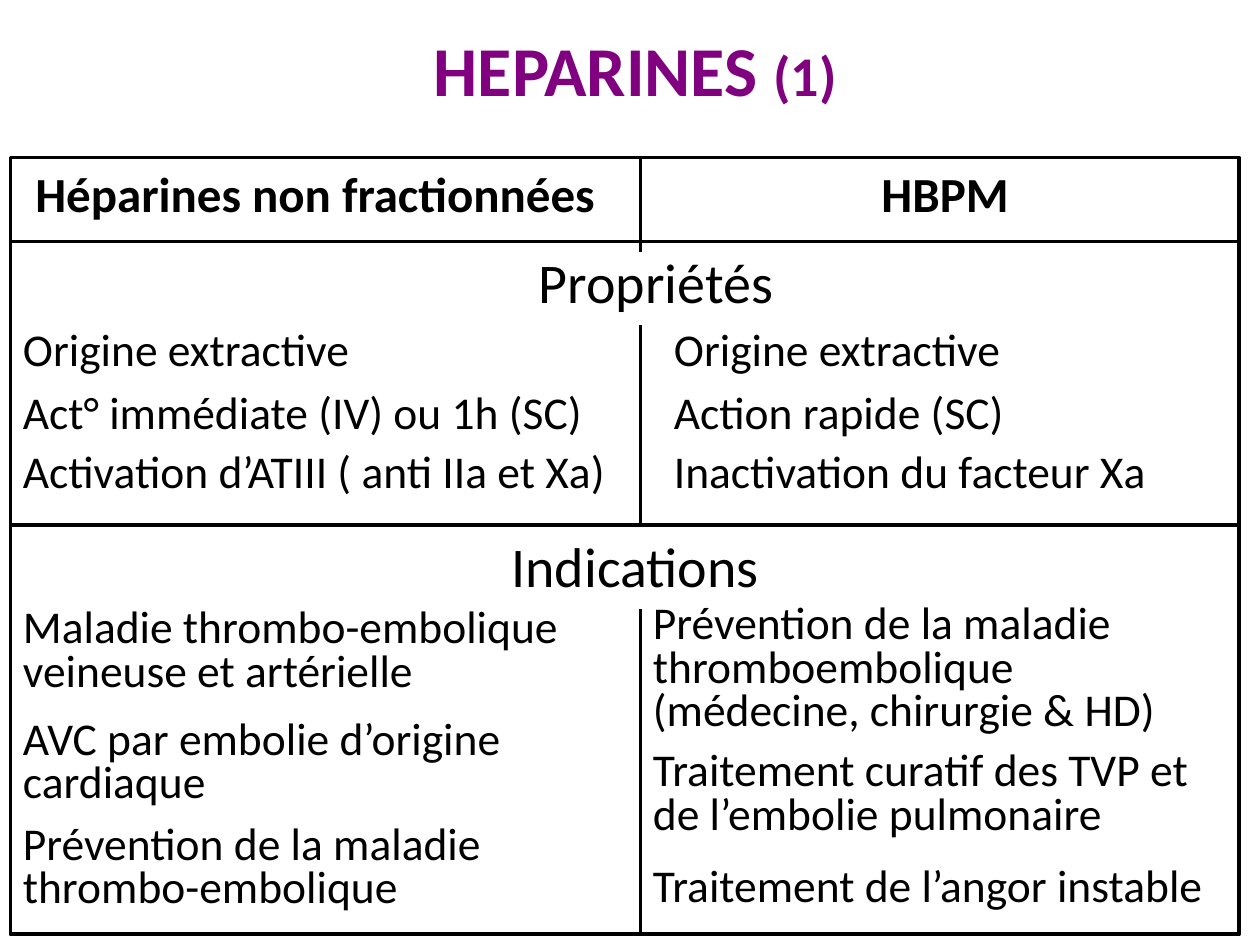
from lxml.etree import SubElement
from pptx import Presentation
from pptx.dml.color import RGBColor
from pptx.enum.shapes import MSO_CONNECTOR, MSO_SHAPE
from pptx.enum.text import MSO_ANCHOR, MSO_AUTO_SIZE, PP_ALIGN
from pptx.oxml.ns import qn
from pptx.util import Emu, Pt

PX = 7620  # EMU per px, 120 px to the inch
COLORS = {"title": "800080", "ink": "000000"}
FONT = "Calibri"
BORDER = Pt(2.25)

LEFT, MIDDLE, RIGHT = 10, 610, 1180
TOP, HEADER_END, PROPERTIES_END, BOTTOM = 150, 230, 500, 890

BODY = {"size": 26, "spacing": 0.8}
HEADER = {"size": 28, "bold": True, "align": PP_ALIGN.CENTER}
SECTION = {"size": 32, "align": PP_ALIGN.CENTER}

HEADERS = [
    ("Héparines non fractionnées", LEFT, TOP, 580, 90),
    ("HBPM", 620, TOP, 560, 80),
]
SECTIONS = [
    ("Propriétés", 470, HEADER_END, 310, 80),
    ("Indications", 450, PROPERTIES_END, 310, 80),
]
# top, height, then text and width on each side
PROPERTIES = [
    (310, 60, ("Origine extractive", 580), ("Origine extractive", 580)),
    (370, 56, ("Act° immédiate (IV) ou 1h (SC)", 770), ("Action rapide (SC)", 530)),
    (426, 34, ("Activation d’ATIII ( anti IIa et Xa)", 600),
     ("Inactivation du facteur Xa", 550)),
]
INDICATIONS = [
    ("Maladie thrombo-embolique veineuse et artérielle", LEFT, 574, 580, 76),
    ("AVC par embolie d’origine cardiaque", LEFT, 680, 570, 90),
    ("Prévention de la maladie thrombo-embolique", LEFT, 780, 590, 90),
    ("Prévention de la maladie thromboembolique (médecine, chirurgie & HD)",
     MIDDLE, 570, 570, 140),
    ("Traitement curatif des TVP et de l’embolie pulmonaire", MIDDLE, 710, 534, 73),
    ("Traitement de l’angor instable", MIDDLE, 820, 608, 60),
]
RULES = [
    (MIDDLE, TOP, MIDDLE, 240),
    (LEFT, HEADER_END, RIGHT, HEADER_END),
    (LEFT, PROPERTIES_END, RIGHT, PROPERTIES_END),
    (MIDDLE, 310, MIDDLE, PROPERTIES_END),
    (MIDDLE, 580, MIDDLE, BOTTOM),
]


def px(*values):
    return [Emu(v * PX) for v in values]


def style_font(font, size, color="ink", bold=False):
    values = {"name": FONT, "size": Pt(size), "bold": bold}
    for name, value in values.items():
        setattr(font, name, value)
    font.color.rgb = RGBColor.from_string(COLORS[color])


def style_line(line):
    line.color.rgb = RGBColor.from_string(COLORS["ink"])
    line.width = BORDER


def add_title(slide):
    sp = slide.shapes.title
    sp.left, sp.top, sp.width, sp.height = px(LEFT, 10, 1190, 110)
    tf = sp.text_frame
    tf.auto_size = MSO_AUTO_SIZE.NONE
    tf.vertical_anchor = MSO_ANCHOR.MIDDLE
    p = tf.paragraphs[0]
    p.alignment = PP_ALIGN.CENTER
    for text, size in (("HEPARINES ", 40), ("(1)", 32)):
        r = p.add_run()
        r.text = text
        style_font(r.font, size, "title", True)


def add_frame(slide):
    sp = slide.shapes.add_shape(
        MSO_SHAPE.RECTANGLE, *px(LEFT, TOP, RIGHT - LEFT, BOTTOM - TOP))
    sp.shadow.inherit = False
    sp.fill.background()
    style_line(sp.line)


def add_rule(slide, *ends):
    cxn = slide.shapes.add_connector(MSO_CONNECTOR.STRAIGHT, *px(*ends))
    style_line(cxn.line)
    SubElement(cxn.element.spPr, qn("a:effectLst"))


def add_text(slide, text, x, y, w, h, size, bold=False,
             align=PP_ALIGN.LEFT, spacing=1.0):
    tf = slide.shapes.add_textbox(*px(x, y, w, h)).text_frame
    tf.word_wrap = True
    p = tf.paragraphs[0]
    p.alignment = align
    p.line_spacing = spacing
    r = p.add_run()
    r.text = text
    style_font(r.font, size, bold=bold)


def main():
    prs = Presentation()
    prs.slide_width, prs.slide_height = px(1200, 900)
    slide = prs.slides.add_slide(prs.slide_layouts[5])

    add_title(slide)
    add_frame(slide)
    for rule in RULES:
        add_rule(slide, *rule)
    for y, h, *sides in PROPERTIES:
        for x, (text, w) in zip((LEFT, 630), sides):
            add_text(slide, text, x, y, w, h, **BODY)
    for items, style in ((HEADERS, HEADER), (INDICATIONS, BODY), (SECTIONS, SECTION)):
        for item in items:
            add_text(slide, *item, **style)

    prs.save("out.pptx")


if __name__ == "__main__":
    main()
